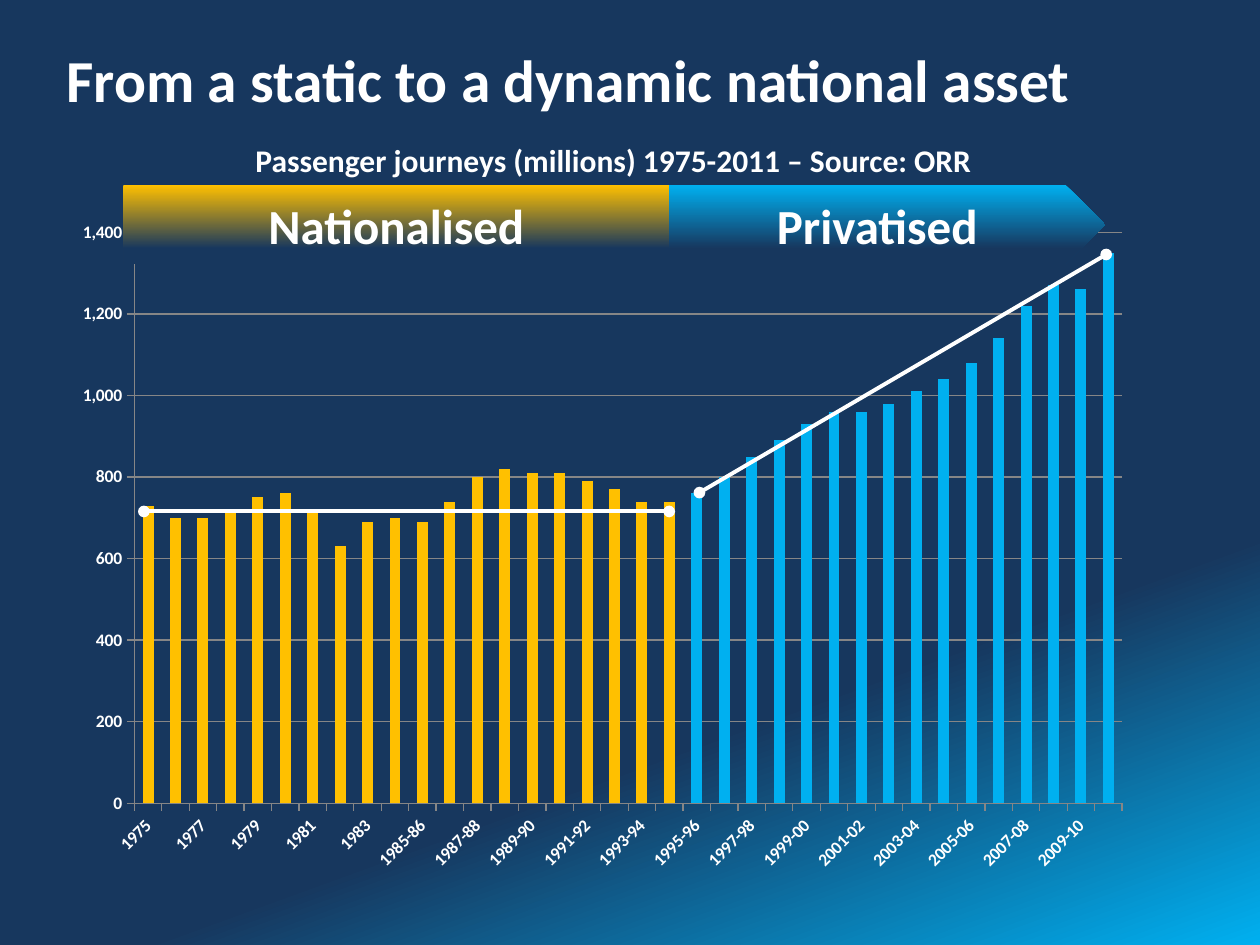
from typing import NamedTuple

from lxml import etree
from pptx import Presentation
from pptx import util as u
from pptx.chart import data
from pptx.dml import color
from pptx.enum import chart as charts, shapes, text
from pptx.oxml import parse_xml
from pptx.oxml.ns import nsdecls, qn

NAVY, BLUE, AMBER, WHITE, GREY = "17375E", "00B0F0", "FFC000", "FFFFFF", "868686"
FONT = "Calibri"


class Box(NamedTuple):
    left: float
    top: float
    width: float
    height: float

    def lengths(self) -> list[u.Length]:
        return [u.Cm(value) for value in self]


class Era(NamedTuple):
    label: str
    kind: shapes.MSO_SHAPE
    box: Box
    hue: str


class Trend(NamedTuple):
    x1: float
    y1: float
    x2: float
    y2: float


TITLE_BOX = Box(1.09, 0.74, 24.21, 1.7)
CAPTION_BOX = Box(4.9, 2.72, 22.61, 1.8)
CHART_BOX = Box(1.3, 4.11, 21.67, 14.02)
PLOT = {"x": 0.065, "y": 0.041, "w": 0.919, "h": 0.821}

ERAS = [
    Era("Nationalised", shapes.MSO_SHAPE.RECTANGLE, Box(2.49, 3.73, 11, 1.6), AMBER),
    Era("Privatised", shapes.MSO_SHAPE.PENTAGON, Box(13.49, 3.73, 8.79, 1.6), BLUE),
]
TRENDS = [Trend(2.9, 10.31, 13.49, 10.31), Trend(14.1, 9.93, 22.3, 5.13)]

YEARS = (
    [str(year) for year in range(1975, 1985)]
    + [f"{year}-{(year + 1) % 100:02d}" for year in range(1985, 2011)]
)
JOURNEYS = [
    730, 700, 700, 720, 750, 760, 720, 630, 690, 700, 690, 740,
    800, 820, 810, 810, 790, 770, 740, 740, 760, 800, 850, 890,
    930, 960, 960, 980, 1010, 1040, 1080, 1140, 1220, 1270, 1260, 1350,
]
FIRST_PRIVATISED = YEARS.index("1995-96")


def rgb(value: str) -> color.RGBColor:
    return color.RGBColor.from_string(value)


def style_font(font, size: float) -> None:
    font.name, font.size, font.bold = FONT, u.Pt(size), True
    font.color.rgb = rgb(WHITE)


def write(frame, words: str, size: float, align=text.PP_ALIGN.LEFT,
          anchor=text.MSO_ANCHOR.TOP) -> None:
    frame.text = words
    frame.word_wrap = True
    frame.vertical_anchor = anchor
    para = frame.paragraphs[0]
    para.alignment = align
    style_font(para.runs[0].font, size)


def fade(fill, start: tuple[float, str], end: tuple[float, str], clockwise: float) -> None:
    """Fill with a two-stop linear gradient."""
    fill.gradient()
    fill.gradient_angle = 360 - clockwise
    for stop, (position, value) in zip(fill.gradient_stops, (start, end)):
        stop.position = position
        stop.color.rgb = rgb(value)


def set_plot_area(chart) -> None:
    """Fix the inner plot area as fractions of the chart."""
    plot_area = chart._chartSpace.chart.plotArea
    for old in plot_area.findall(qn("c:layout")):
        plot_area.remove(old)
    sizes = "".join(f'<c:{key} val="{value}"/>' for key, value in PLOT.items())
    plot_area.insert(0, parse_xml(
        f'<c:layout {nsdecls("c")}><c:manualLayout><c:layoutTarget val="inner"/>'
        f'<c:xMode val="edge"/><c:yMode val="edge"/>{sizes}</c:manualLayout></c:layout>'))


def add_journeys_chart(slide) -> None:
    journeys = data.CategoryChartData()
    journeys.categories = YEARS
    journeys.add_series("Series 1", JOURNEYS)
    chart = slide.shapes.add_chart(
        charts.XL_CHART_TYPE.COLUMN_CLUSTERED, *CHART_BOX.lengths(), journeys).chart
    chart.has_legend = chart.has_title = False
    chart.font.name, chart.font.size = FONT, u.Pt(10)
    set_plot_area(chart)

    plot = chart.plots[0]
    plot.gap_width = 150
    plot.vary_by_categories = False
    series = plot.series[0]
    series.format.fill.solid()
    series.format.fill.fore_color.rgb = rgb(AMBER)
    for index in range(FIRST_PRIVATISED, len(YEARS)):
        fill = series.points[index].format.fill
        fill.solid()
        fill.fore_color.rgb = rgb(BLUE)

    years, values = chart.category_axis, chart.value_axis
    for axis in (years, values):
        axis.major_tick_mark = charts.XL_TICK_MARK.OUTSIDE
        axis.format.line.color.rgb = rgb(GREY)
        style_font(axis.tick_labels.font, 10)
    values.minimum_scale, values.maximum_scale, values.major_unit = 0, 1400, 200
    values.has_major_gridlines = True
    values.major_gridlines.format.line.color.rgb = rgb(GREY)
    values.tick_labels.number_format = "#,##0"
    values.tick_labels.number_format_is_linked = False

    years_xml = years._element
    years_xml.find(".//" + qn("a:bodyPr")).set("rot", "-2700000")
    skip = parse_xml(f'<c:tickLblSkip {nsdecls("c")} val="2"/>')
    years_xml.find(qn("c:noMultiLvlLbl")).addprevious(skip)


def add_era(slide, era: Era) -> None:
    banner = slide.shapes.add_shape(era.kind, *era.box.lengths())
    banner.shadow.inherit = False
    banner.line.fill.background()
    fade(banner.fill, (0, era.hue), (0.8, NAVY), 90)
    write(banner.text_frame, era.label, 28, text.PP_ALIGN.CENTER, text.MSO_ANCHOR.MIDDLE)


def add_trend(slide, trend: Trend) -> None:
    line = slide.shapes.add_connector(
        shapes.MSO_CONNECTOR.STRAIGHT, *[u.Cm(value) for value in trend])
    line.line.color.rgb = rgb(WHITE)
    line.line.width = u.Pt(2.25)
    outline = line.line._get_or_add_ln()
    for end in ("a:headEnd", "a:tailEnd"):
        etree.SubElement(outline, qn(end), type="oval")
    etree.SubElement(line._element.spPr, qn("a:effectLst"))


def main() -> None:
    deck = Presentation()
    deck.slide_width, deck.slide_height = u.Cm(25.4), u.Cm(19.05)
    slide = deck.slides.add_slide(deck.slide_layouts.get_by_name("Title Only"))
    fade(slide.background.fill, (0.71, NAVY), (1, BLUE), 70)

    title = slide.shapes.title
    title.left, title.top, title.width, title.height = TITLE_BOX.lengths()
    write(title.text_frame, "From a static to a dynamic national asset", 34)

    add_journeys_chart(slide)
    for era in ERAS:
        add_era(slide, era)
    for trend in TRENDS:
        add_trend(slide, trend)
    caption = slide.shapes.add_textbox(*CAPTION_BOX.lengths())
    write(caption.text_frame, "Passenger journeys (millions) 1975-2011 – Source: ORR", 18)

    deck.save("out.pptx")


if __name__ == "__main__":
    main()
